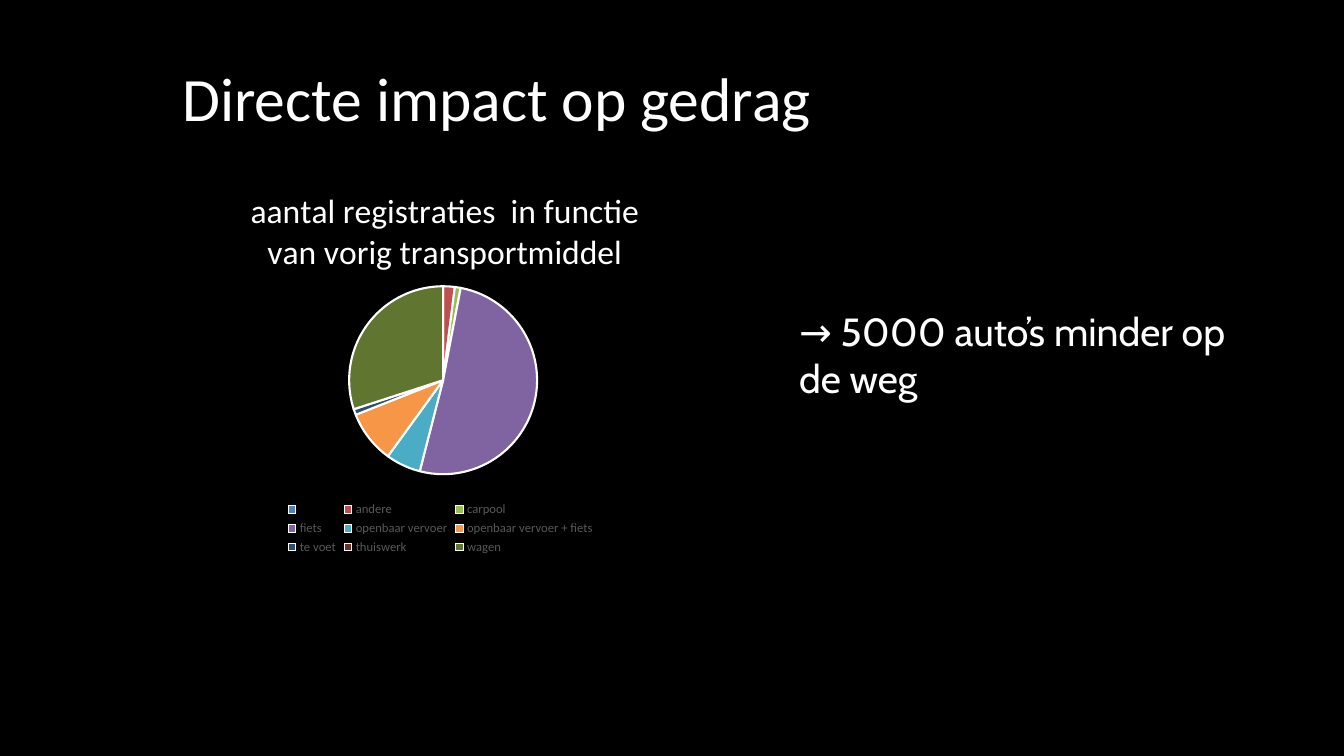
from lxml import etree
from pptx import Presentation
from pptx import util as u
from pptx.chart import data as chart_data
from pptx.dml.color import RGBColor
from pptx.enum import chart as chart_enum, text
from pptx.oxml import parse_xml

COLORS = {"background": "000000", "text": "FFFFFF", "legend": "595959"}

TRANSPORT = [
    ("", None, "4F81BD"),
    ("andere", 2, "C0504D"),
    ("carpool", 1, "9BBB59"),
    ("fiets", 51, "8064A2"),
    ("openbaar vervoer", 6, "4BACC6"),
    ("openbaar vervoer + fiets", 9, "F79646"),
    ("te voet", 1, "2C4D75"),
    ("thuiswerk", 0, "772C2A"),
    ("wagen", 30, "5F7530"),
]


def style_font(font, name, size, color):
    """Apply typeface, point size and hex colour to a font."""
    font.name = name
    font.size = u.Pt(size)
    font.bold = False
    font.color.rgb = RGBColor.from_string(color)


def add_run(paragraph, words, name, size):
    """Add one run of light text to a paragraph."""
    run = paragraph.add_run()
    run.text = words
    style_font(run.font, name, size, COLORS["text"])


def manual_layout(**fractions):
    """Return a chart layout element for fractions of the chart area."""
    namespace = "http://schemas.openxmlformats.org/drawingml/2006/chart"
    layout = parse_xml(f'<c:layout xmlns:c="{namespace}"><c:manualLayout/></c:layout>')
    settings = {"xMode": "edge", "yMode": "edge", **fractions}
    for tag, value in settings.items():
        etree.SubElement(layout[0], f"{{{namespace}}}{tag}", val=str(value))
    return layout


def replace_layout(parent, layout, position):
    """Put a layout into a chart part in place of its present one."""
    for old in parent.findall("{*}layout"):
        parent.remove(old)
    parent.insert(position, layout)


def place_heading(slide, left, top, width, height):
    """Place the slide title in the given box."""
    heading = slide.shapes.title
    heading.left, heading.top, heading.width, heading.height = left, top, width, height
    frame = heading.text_frame
    frame.vertical_anchor = text.MSO_ANCHOR.MIDDLE
    frame.paragraphs[0].alignment = text.PP_ALIGN.LEFT
    add_run(frame.paragraphs[0], "Directe impact op gedrag", "Calibri", 44)


def place_transport_pie(slide, left, top, width, height):
    """Place the pie of registrations by former means of transport."""
    registrations = chart_data.CategoryChartData()
    registrations.categories = [label for label, _, _ in TRANSPORT]
    registrations.add_series("Series 1", [share for _, share, _ in TRANSPORT])
    pie = slide.shapes.add_chart(
        chart_enum.XL_CHART_TYPE.PIE, left, top, width, height, registrations
    ).chart
    style_font(pie.font, "Calibri", 10, COLORS["background"])

    pie.has_title = True
    caption = pie.chart_title
    caption.include_in_layout = False
    add_run(
        caption.text_frame.paragraphs[0],
        "aantal registraties  in functie van vorig transportmiddel",
        "Calibri",
        24,
    )
    title_xml = pie.element.find(".//{*}title")
    replace_layout(title_xml, manual_layout(x=0.14, y=0.06), 1)

    plot_xml = pie.element.find(".//{*}plotArea")
    pie_area = manual_layout(x=0.33, y=0.32, w=0.35, h=0.47)
    etree.SubElement(pie_area[0], pie_area[0][0].tag.replace("xMode", "layoutTarget"), val="inner")
    pie_area[0].insert(0, pie_area[0][-1])
    replace_layout(plot_xml, pie_area, 0)

    pie.has_legend = True
    pie.legend.position = chart_enum.XL_LEGEND_POSITION.BOTTOM
    pie.legend.include_in_layout = False
    style_font(pie.legend.font, "Calibri", 9, COLORS["legend"])

    plot = pie.plots[0]
    plot.vary_by_categories = True
    for index, (_, _, color) in enumerate(TRANSPORT):
        slice_format = plot.series[0].points[index].format
        slice_format.fill.solid()
        slice_format.fill.fore_color.rgb = RGBColor.from_string(color)
        slice_format.line.color.rgb = RGBColor.from_string(COLORS["text"])
        slice_format.line.width = u.Pt(1.5)


def place_conclusion(slide, left, top, width, height):
    """Place the conclusion beside the pie."""
    frame = slide.shapes.add_textbox(left, top, width, height).text_frame
    frame.word_wrap = True
    frame.margin_top = u.Cm(0.94)
    add_run(frame.paragraphs[0], "→ 5000 auto’s minder op de weg", "Cabin", 28)


def main():
    """Build and save the slide."""
    deck = Presentation()
    deck.slide_width, deck.slide_height = u.Cm(33.87), u.Cm(19.05)
    slide = deck.slides.add_slide(deck.slide_layouts[5])
    slide.background.fill.solid()
    slide.background.fill.fore_color.rgb = RGBColor.from_string(COLORS["background"])
    place_heading(slide, u.Cm(4.34), u.Cm(0), u.Cm(27.84), u.Cm(4.88))
    place_transport_pie(slide, u.Cm(4.24), u.Cm(3.99), u.Cm(13.72), u.Cm(10.08))
    place_conclusion(slide, u.Cm(19.89), u.Cm(6.81), u.Cm(11.25), u.Cm(4.95))
    deck.save("out.pptx")


if __name__ == "__main__":
    main()
